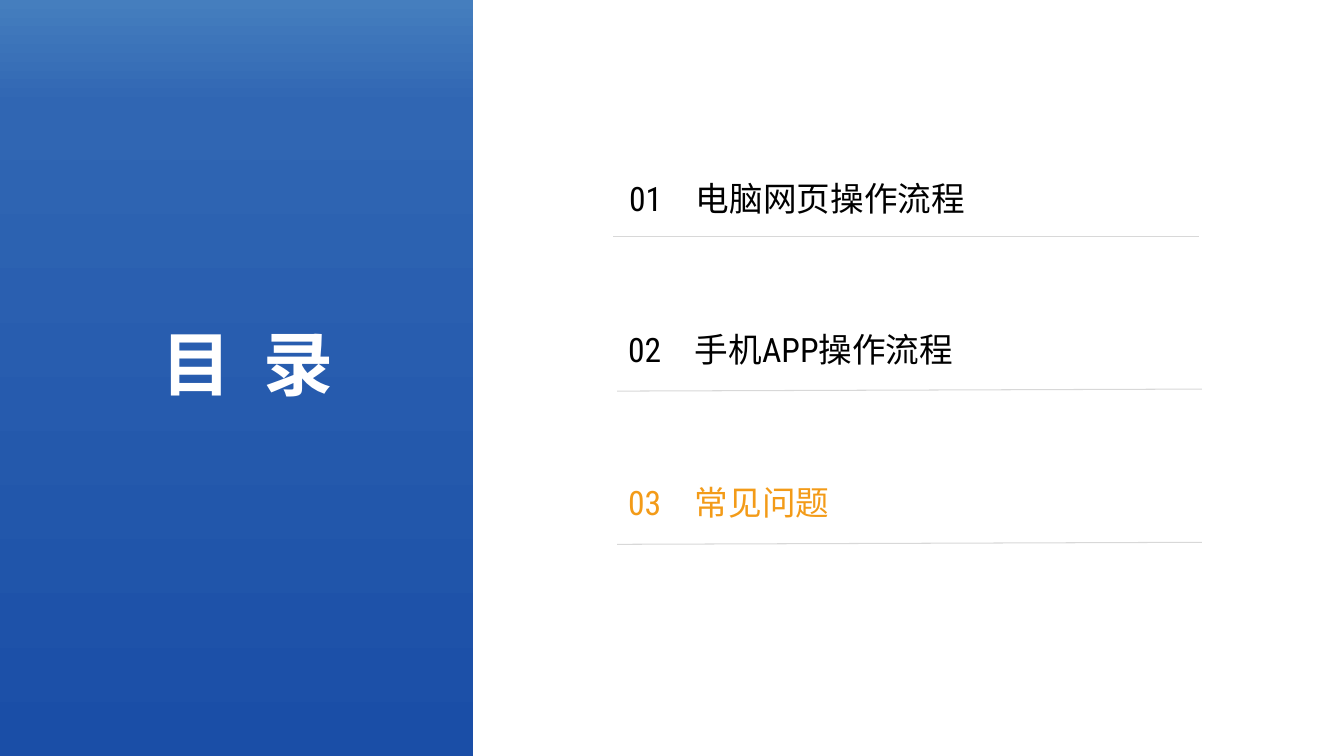
"""Build the contents slide with a gradient title panel and three ruled entries."""
import lxml.etree
import pptx
import pptx.dml.color
import pptx.enum.dml
import pptx.enum.shapes
import pptx.enum.text
import pptx.oxml.ns
import pptx.util

Inches = pptx.util.Inches

TITLE = "目  录"
ENTRIES = [
    {"text": "01　电脑网页操作流程", "color": "black", "box": (6.24, 1.77, 4.05, 0.4),
     "rule": (6.08, 2.35, 11.89, 2.35)},
    {"text": "02　手机APP操作流程", "color": "black", "box": (6.23, 3.26, 4.76, 0.4),
     "rule": (6.12, 3.88, 11.92, 3.86)},
    {"text": "03　常见问题", "color": "accent", "box": (6.23, 4.78, 4.76, 0.4),
     "rule": (6.12, 5.4, 11.92, 5.38)},
]
PANEL_BOX = (-0.01, 0, 4.7, 7.5)
TITLE_BOX = (0.94, 3.13, 3.03, 0.94)

THEME = {
    "colors": {"white": "FFFFFF", "black": "000000", "accent": "F39B18", "rule": "D8D8D8"},
    "panel": [(0, "457EBE"), (14, "3066B3"), (100, "1A4EA7")],
    "title": {"name": "Calibri", "size": pptx.util.Pt(50), "bold": True},
    "entry": {"name": "Roboto Condensed", "size": pptx.util.Pt(24)},
    "rule_width": pptx.util.Pt(0.75),
}


def color(name):
    return pptx.dml.color.RGBColor.from_string(THEME["colors"][name])


def apply(target, values):
    for name, value in values.items():
        setattr(target, name, value)


def add_panel(slide):
    panel = slide.shapes.add_shape(
        pptx.enum.shapes.MSO_SHAPE.RECTANGLE, *map(Inches, PANEL_BOX))
    panel.shadow.inherit = False
    panel.line.fill.background()
    panel.fill.gradient()
    panel.fill.gradient_angle = 270
    qn = pptx.oxml.ns.qn
    stops = panel.element.spPr.find(".//" + qn("a:gsLst"))
    for stop in list(stops):
        stops.remove(stop)
    for percent, value in THEME["panel"]:
        stop = lxml.etree.SubElement(stops, qn("a:gs"), pos=str(percent * 1000))
        lxml.etree.SubElement(stop, qn("a:srgbClr"), val=value)


def add_text(slide, box, text, font, color_name, frame_format, alignment):
    frame = slide.shapes.add_textbox(*map(Inches, box)).text_frame
    apply(frame, {"word_wrap": True,
                  "auto_size": pptx.enum.text.MSO_AUTO_SIZE.SHAPE_TO_FIT_TEXT,
                  **frame_format})
    paragraph = frame.paragraphs[0]
    paragraph.alignment = alignment
    run = paragraph.add_run()
    run.text = text
    apply(run.font, font)
    run.font.color.rgb = color(color_name)


def add_rule(slide, ends):
    rule = slide.shapes.add_connector(
        pptx.enum.shapes.MSO_CONNECTOR.STRAIGHT, *map(Inches, ends))
    rule.line.width = THEME["rule_width"]
    rule.line.color.rgb = color("rule")
    lxml.etree.SubElement(rule.element.spPr, pptx.oxml.ns.qn("a:effectLst"))


def main():
    presentation = pptx.Presentation()
    apply(presentation, {"slide_width": Inches(13.33), "slide_height": Inches(7.5)})
    slide = presentation.slides.add_slide(presentation.slide_layouts[6])
    align = pptx.enum.text.PP_ALIGN
    entry_frame = {"vertical_anchor": pptx.enum.text.MSO_ANCHOR.MIDDLE,
                   "margin_left": 0, "margin_top": 0,
                   "margin_right": 0, "margin_bottom": 0}
    add_panel(slide)
    add_text(slide, TITLE_BOX, TITLE, THEME["title"], "white", {}, align.CENTER)
    for entry in ENTRIES:
        add_text(slide, entry["box"], entry["text"], THEME["entry"], entry["color"],
                 entry_frame, align.LEFT)
        add_rule(slide, entry["rule"])
    presentation.save("out.pptx")


if __name__ == "__main__":
    main()
